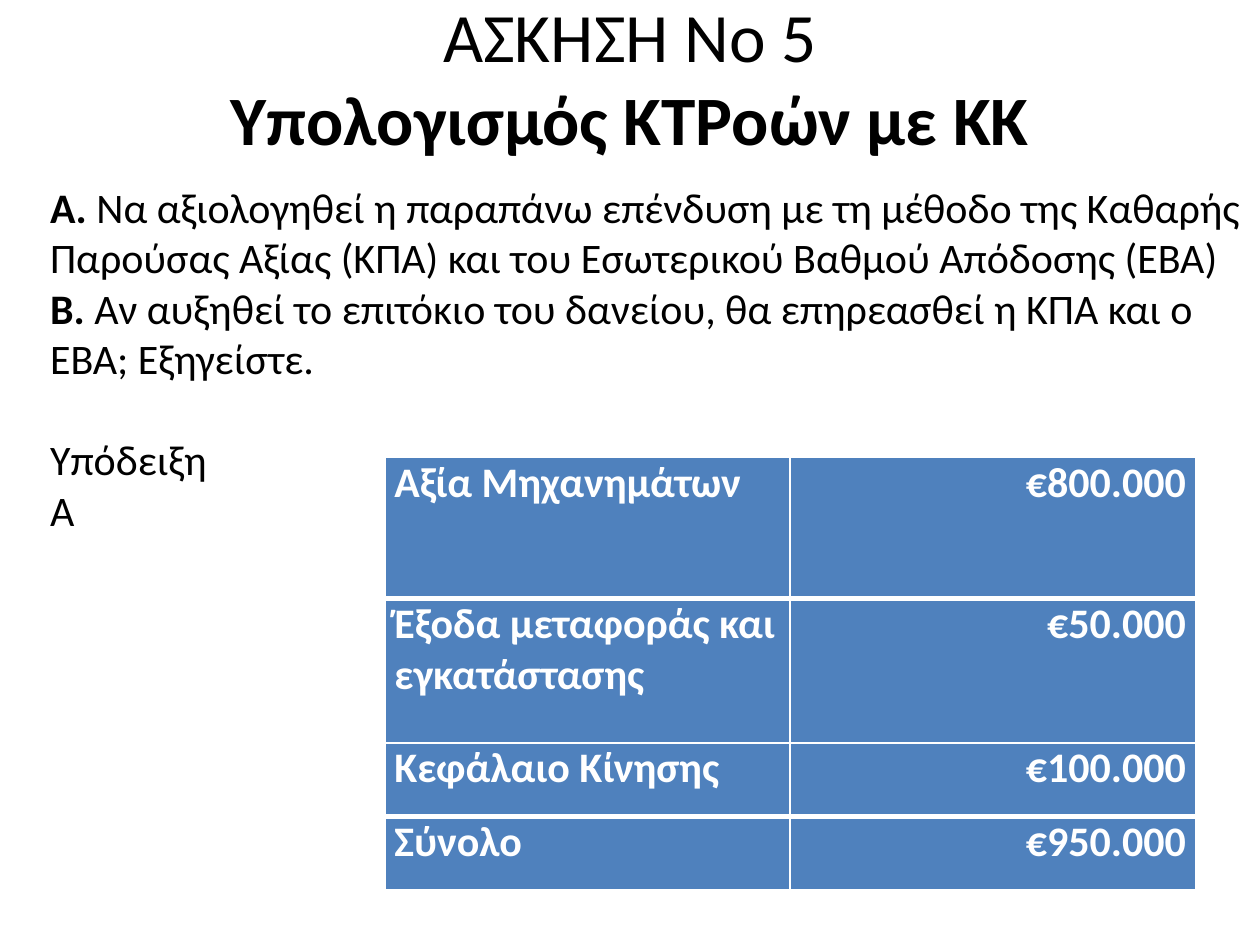
from lxml.etree import SubElement
from pptx import Presentation
from pptx.dml.color import RGBColor
from pptx.enum.text import MSO_ANCHOR, PP_ALIGN
from pptx.oxml.ns import qn
from pptx.util import Cm, Pt

FONT = "Calibri"
BLACK, WHITE, BLUE = "000000", "FFFFFF", "4F81BD"

TITLE = [("ΑΣΚΗΣΗ Νο 5", False), ("Υπολογισμός ΚΤΡοών με ΚΚ", True)]
# Each question line: bold label, plain text, space before in points
QUESTIONS = [
    ("Α. ", "Να αξιολογηθεί η παραπάνω επένδυση με τη μέθοδο της Καθαρής "
     "Παρούσας Αξίας (ΚΠΑ) και του Εσωτερικού Βαθμού Απόδοσης (ΕΒΑ)", 0),
    ("Β. ", "Αν αυξηθεί το επιτόκιο του δανείου, θα επηρεασθεί η ΚΠΑ και ο "
     "ΕΒΑ; Εξηγείστε.", 0),
    ("", "Υπόδειξη", 29),
    ("", "Α", 0),
]
COSTS = [
    ("Αξία Μηχανημάτων", "€800.000"),
    ("Έξοδα μεταφοράς και εγκατάστασης", "€50.000"),
    ("Κεφάλαιο Κίνησης", "€100.000"),
    ("Σύνολο", "€950.000"),
]
ROW_HEIGHTS = [2.84, 2.92, 1.48, 1.48]
THICK_AFTER = {0, 2}  # rows with a heavy rule below them


def rgb(value):
    return RGBColor.from_string(value)


def add_span(para, text, size, bold=False, color=BLACK):
    span = para.add_run()
    span.text = text
    for name, value in {"name": FONT, "size": Pt(size), "bold": bold}.items():
        setattr(span.font, name, value)
    span.font.color.rgb = rgb(color)


def add_text_frame(page, box, anchor):
    frame = page.shapes.add_textbox(*map(Cm, box)).text_frame
    frame.word_wrap = True
    frame.vertical_anchor = anchor
    return frame


def add_title(page, box):
    para = add_text_frame(page, box, MSO_ANCHOR.MIDDLE).paragraphs[0]
    para.alignment = PP_ALIGN.CENTER
    for index, (text, bold) in enumerate(TITLE):
        if index:
            para.add_line_break()
        add_span(para, text, 39.6, bold)


def add_questions(page, box):
    frame = add_text_frame(page, box, MSO_ANCHOR.TOP)
    for index, (label, text, gap) in enumerate(QUESTIONS):
        para = frame.add_paragraph() if index else frame.paragraphs[0]
        para.space_before = Pt(gap)
        if label:
            add_span(para, label, 24, True)
        add_span(para, text, 24)


def set_borders(cell, widths):
    properties = cell._tc.get_or_add_tcPr()
    for side in ("L", "R", "T", "B"):
        line = SubElement(properties, qn(f"a:ln{side}"),
                          w=str(Pt(widths.get(side, 1))))
        fill = SubElement(line, qn("a:solidFill"))
        SubElement(fill, qn("a:srgbClr"), val=WHITE)


def add_costs(page, box):
    table = page.shapes.add_table(len(COSTS), 2, *map(Cm, box)).table
    for column in table.columns:
        column.width = Cm(box[2] / 2)
    for index, (row, texts) in enumerate(zip(table.rows, COSTS)):
        row.height = Cm(ROW_HEIGHTS[index])
        widths = {"T": 3 if index - 1 in THICK_AFTER else 1,
                  "B": 3 if index in THICK_AFTER else 1}
        for cell, text, side in zip(row.cells, texts,
                                    (PP_ALIGN.LEFT, PP_ALIGN.RIGHT)):
            set_borders(cell, widths)
            cell.fill.solid()
            cell.fill.fore_color.rgb = rgb(BLUE)
            margins = {"margin_left": 0.19, "margin_right": 0.19,
                       "margin_top": 0, "margin_bottom": 0}
            for name, value in margins.items():
                setattr(cell, name, Cm(value))
            para = cell.text_frame.paragraphs[0]
            para.alignment = side
            add_span(para, text, 24, True, WHITE)


def main():
    deck = Presentation()
    deck.slide_width, deck.slide_height = Cm(25.4), Cm(19.05)
    page = deck.slides.add_slide(deck.slide_layouts[6])
    # Boxes: left, top, width, height in centimetres
    add_title(page, (1.9, 0.74, 21.6, 1.6))
    add_questions(page, (0.76, 3.53, 24.69, 7.44))
    add_costs(page, (7.76, 9.22, 16.34, sum(ROW_HEIGHTS)))
    deck.save("out.pptx")


if __name__ == "__main__":
    main()
